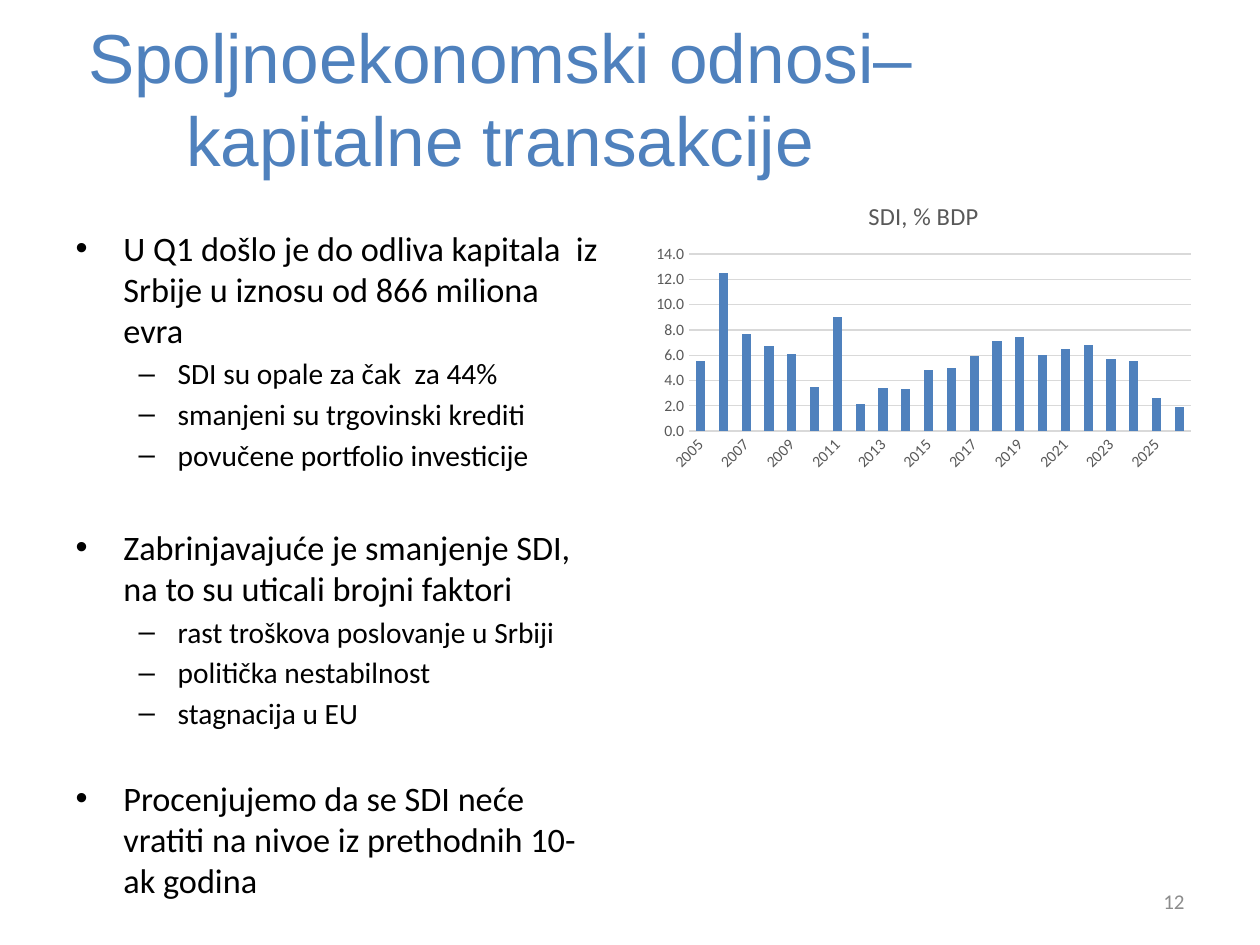
import pptx
import pptx.chart.data
import pptx.dml.color
import pptx.enum.chart
import pptx.enum.text
import pptx.oxml
import pptx.oxml.ns
import pptx.util
from pptx.util import Inches, Pt

# Content
TITLE = "Spoljnoekonomski odnosi–kapitalne transakcije"
PAGE_NUMBER = "12"
SECTIONS = [
    ("U Q1 došlo je do odliva kapitala  iz Srbije u iznosu od 866 miliona evra",
     ["SDI su opale za čak  za 44%", "smanjeni su trgovinski krediti",
      "povučene portfolio investicije"]),
    ("Zabrinjavajuće je smanjenje SDI, na to su uticali brojni faktori",
     ["rast troškova poslovanje u Srbiji", "politička nestabilnost",
      "stagnacija u EU"]),
    ("Procenjujemo da se SDI neće vratiti na nivoe iz prethodnih 10- ak godina", []),
]
SECTION_GAPS = [0, 31, 27]  # points above each section
CHART_TITLE = "SDI, % BDP"
PERIODS = [str(year) for year in range(2005, 2026)] + ["2026Q1"]
FDI_SHARES = [5.5, 12.5, 7.7, 6.7, 6.1, 3.5, 9, 2.1, 3.4, 3.3, 4.8,
              5, 5.9, 7.1, 7.4, 6, 6.5, 6.8, 5.7, 5.5, 2.6, 1.9]

# Formats
BLUE, BLACK, GREY, LIGHT, PAGE_GREY = "4F81BD", "000000", "595959", "D9D9D9", "8C8C8C"
LEVELS = [
    {"bullet": "•", "size": 19.6, "margin": 0.38, "indent": -0.38},
    {"bullet": "–", "size": 16.8, "margin": 0.81, "indent": -0.31},
]
ALIGN = pptx.enum.text.PP_ALIGN
MIDDLE = pptx.enum.text.MSO_ANCHOR.MIDDLE
TOP = pptx.enum.text.MSO_ANCHOR.TOP


def colour(hex_value):
    return pptx.dml.color.RGBColor.from_string(hex_value)


def set_font(font, size, hex_value, name="Calibri"):
    values = {"size": Pt(size), "name": name, "bold": False}
    for key, value in values.items():
        setattr(font, key, value)
    font.color.rgb = colour(hex_value)


def set_line(line, hex_value):
    line.color.rgb = colour(hex_value)
    line.width = Pt(0.75)


def place(shape, left, top, width, height, anchor):
    values = {"left": left, "top": top, "width": width, "height": height}
    for key, value in values.items():
        setattr(shape, key, Inches(value))
    frame = shape.text_frame
    frame.word_wrap = True
    frame.auto_size = pptx.enum.text.MSO_AUTO_SIZE.NONE
    frame.vertical_anchor = anchor
    return frame


def write_line(paragraph, text, alignment, size, hex_value, name="Calibri"):
    paragraph.text = text
    paragraph.alignment = alignment
    set_font(paragraph.font, size, hex_value, name)
    set_font(paragraph.runs[0].font, size, hex_value, name)


def write_bullet(paragraph, text, level, space_before):
    style = LEVELS[level]
    paragraph.level = level
    paragraph.space_before = Pt(space_before)
    properties = paragraph._p.get_or_add_pPr()
    properties.set("marL", str(Inches(style["margin"])))
    properties.set("indent", str(Inches(style["indent"])))
    bullet = pptx.oxml.parse_xml(
        f'<a:buChar {pptx.oxml.ns.nsdecls("a")} char="{style["bullet"]}"/>')
    properties.append(bullet)
    write_line(paragraph, text, ALIGN.LEFT, style["size"], BLACK)


presentation = pptx.Presentation()
presentation.slide_width, presentation.slide_height = Inches(10), Inches(7.5)
slide = presentation.slides.add_slide(presentation.slide_layouts[1])

# Title
title_frame = place(slide.shapes.title, 0.47, 0.15, 7, 1.25, MIDDLE)
write_line(title_frame.paragraphs[0], TITLE, ALIGN.CENTER, 39.6, BLUE, "Arial")

# Bulleted list
body_frame = place(slide.placeholders[1], 0.5, 1.75, 4.38, 4.95, TOP)
for index, (heading, details) in enumerate(SECTIONS):
    paragraph = body_frame.add_paragraph() if index else body_frame.paragraphs[0]
    write_bullet(paragraph, heading, 0, SECTION_GAPS[index])
    for detail in details:
        write_bullet(body_frame.add_paragraph(), detail, 1, 3)

# Page number
page_box = slide.shapes.add_textbox(0, 0, 0, 0)
page_frame = place(page_box, 7.17, 6.95, 2.33, 0.4, MIDDLE)
write_line(page_frame.paragraphs[0], PAGE_NUMBER, ALIGN.RIGHT, 12, PAGE_GREY)

# Column chart
chart_data = pptx.chart.data.CategoryChartData(number_format="#,##0.0")
chart_data.categories = PERIODS
chart_data.add_series(CHART_TITLE, FDI_SHARES)
chart = slide.shapes.add_chart(
    pptx.enum.chart.XL_CHART_TYPE.COLUMN_CLUSTERED,
    Inches(5.12), Inches(1.44), Inches(4.42), Inches(2.35), chart_data).chart
set_font(chart.font, 10, BLACK)
chart.has_legend = False
chart.has_title = True
write_line(chart.chart_title.text_frame.paragraphs[0], CHART_TITLE,
           ALIGN.CENTER, 14, GREY)
chart.chart_title.include_in_layout = False

plot = chart.plots[0]
plot.gap_width = 150
plot.vary_by_categories = False
fill = plot.series[0].format.fill
fill.solid()
fill.fore_color.rgb = colour(BLUE)

for axis in (chart.category_axis, chart.value_axis):
    axis.major_tick_mark = pptx.enum.chart.XL_TICK_MARK.NONE
    axis.minor_tick_mark = pptx.enum.chart.XL_TICK_MARK.NONE
    set_font(axis.tick_labels.font, 9, GREY)
chart.category_axis.has_major_gridlines = False
set_line(chart.category_axis.format.line, LIGHT)
value_axis = chart.value_axis
value_axis.format.line.fill.background()
value_axis.minimum_scale, value_axis.maximum_scale, value_axis.major_unit = 0, 14, 2
value_axis.tick_labels.number_format = "#,##0.0"
value_axis.tick_labels.number_format_is_linked = False
set_line(value_axis.major_gridlines.format.line, LIGHT)

# Slanted labels, every second period
axis_xml = chart.category_axis._element
axis_xml.find(pptx.oxml.ns.qn("c:txPr")).find(
    pptx.oxml.ns.qn("a:bodyPr")).set("rot", "-2700000")
label_skip = pptx.oxml.parse_xml(
    f'<c:tickLblSkip {pptx.oxml.ns.nsdecls("c")} val="2"/>')
axis_xml.find(pptx.oxml.ns.qn("c:noMultiLvlLbl")).addprevious(label_skip)

presentation.save("out.pptx")
